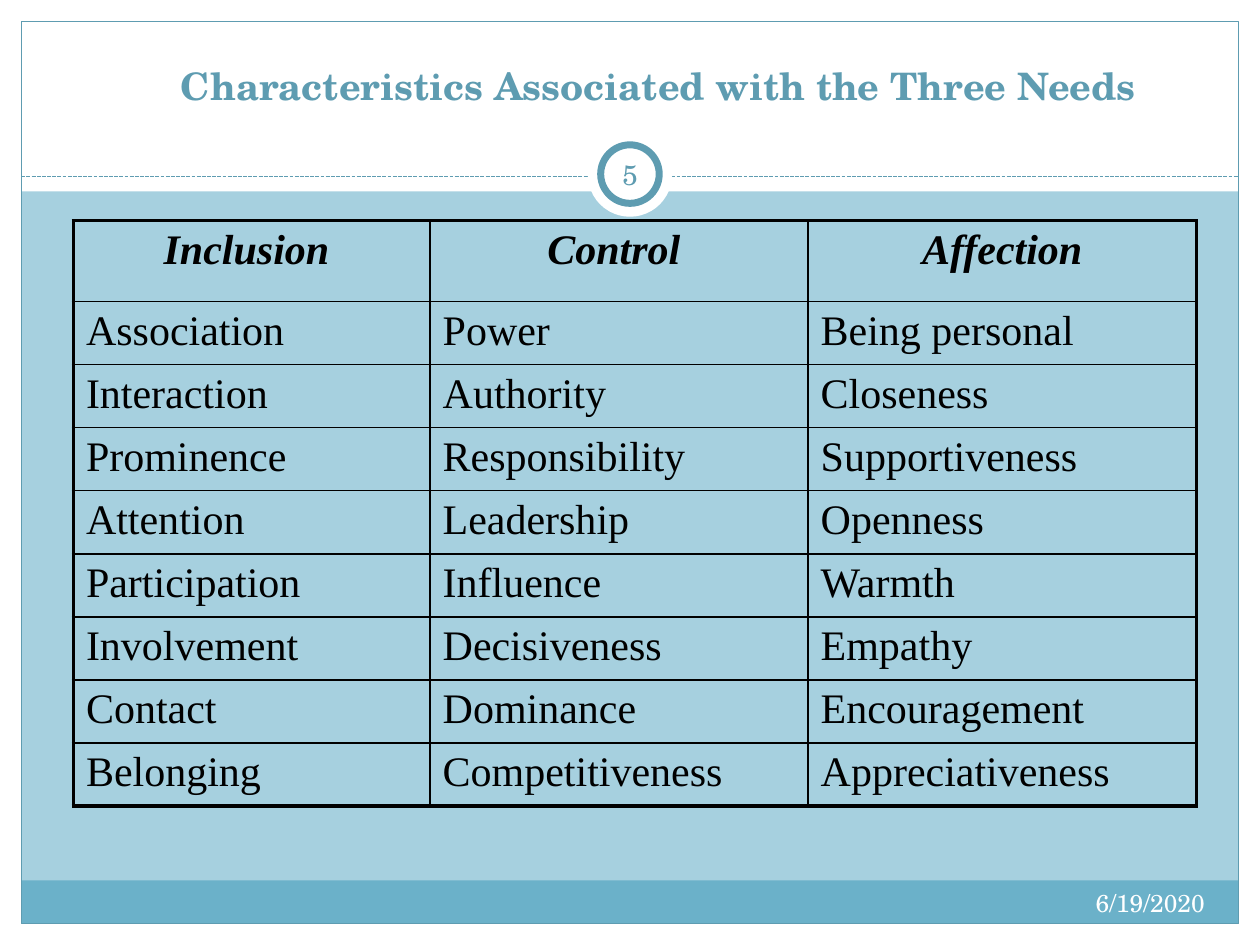
from lxml.etree import SubElement as sub, Element
from pptx import Presentation
from pptx.dml.color import RGBColor as RGB
from pptx.enum.dml import MSO_LINE as Dash
from pptx.enum.shapes import MSO_CONNECTOR as Conn, MSO_SHAPE as Kind
from pptx.enum.text import MSO_ANCHOR as Anchor, PP_ALIGN as Align
from pptx.oxml.ns import qn
from pptx.util import Cm, Pt

SKY = RGB(0xA6, 0xD0, 0xDF)
BLUE = RGB(0x6B, 0xB1, 0xC9)
TEAL = RGB(0x5E, 0x9C, 0xB1)
WHITE = RGB(0xFF, 0xFF, 0xFF)
BLACK = RGB(0, 0, 0)
SCHOOL = "TeX Gyre Schola"
TIMES = "Times New Roman"

WIDE, HIGH, EDGE = 25.4, 19.05, 0.43
THICK, THIN = Pt(2.25), Pt(1)
COLS = (7.19, 7.62, 7.83)
HEAD, ROW = 1.63, 1.19
NEEDS = [
    ("Inclusion ", "Control ", "Affection"),
    ("Association", "Power", "Being personal"),
    ("Interaction", "Authority", "Closeness"),
    ("Prominence", "Responsibility", "Supportiveness"),
    ("Attention", "Leadership", "Openness"),
    ("Participation", "Influence", "Warmth"),
    ("Involvement", "Decisiveness", "Empathy"),
    ("Contact", "Dominance", "Encouragement"),
    ("Belonging", "Competitiveness", "Appreciativeness"),
]


def add_box(slide, kind, box, fill=None, line=None, width=0.75):
    shape = slide.shapes.add_shape(kind, *map(Cm, box))
    shape.shadow.inherit = False
    if fill is None:
        shape.fill.background()
    else:
        shape.fill.solid()
        shape.fill.fore_color.rgb = fill
    if line is None:
        shape.line.fill.background()
    else:
        shape.line.color.rgb = line
        shape.line.width = Pt(width)


def add_rule(slide, left, right, top):
    rule = slide.shapes.add_connector(Conn.STRAIGHT, Cm(left), Cm(top), Cm(right), Cm(top))
    rule.line.color.rgb = TEAL
    rule.line.width = Pt(0.75)
    rule.line.dash_style = Dash.SQUARE_DOT
    sub(rule._element.spPr, qn("a:effectLst"))


def add_run(frame, text, align, size, font, color, bold=False, slant=False):
    para = frame.paragraphs[0]
    para.alignment = align
    run = para.add_run()
    run.text = text
    run.font.size = Pt(size)
    run.font.name = font
    run.font.color.rgb = color
    run.font.bold = bold
    run.font.italic = slant


def add_text(slide, box, text, align, size, color, anchor=Anchor.TOP, bold=False, side=0.25):
    frame = slide.shapes.add_textbox(*map(Cm, box)).text_frame
    frame.word_wrap = True
    frame.vertical_anchor = anchor
    frame.margin_left = frame.margin_right = Cm(side)
    add_run(frame, text, align, size, SCHOOL, color, bold)


def set_edges(cell, widths):
    """Border widths go left, right, top, bottom, ahead of the fill."""
    props = cell._tc.get_or_add_tcPr()
    for place, (side, width) in enumerate(zip("LRTB", widths)):
        edge = Element(qn("a:ln" + side), w=str(width))
        fill = sub(edge, qn("a:solidFill"))
        sub(fill, qn("a:srgbClr"), val=str(BLACK))
        props.insert(place, edge)


def add_needs(slide, left, top):
    rows, cols = len(NEEDS), len(COLS)
    tall = HEAD + ROW * (rows - 1)
    frame = slide.shapes.add_table(rows, cols, Cm(left), Cm(top), Cm(sum(COLS)), Cm(tall))
    table = frame.table
    table.first_row = table.horz_banding = False
    for col, width in zip(table.columns, COLS):
        col.width = Cm(width)
    for r, words in enumerate(NEEDS):
        head = r == 0
        table.rows[r].height = Cm(HEAD if head else ROW)
        for c, word in enumerate(words):
            cell = table.cell(r, c)
            cell.fill.background()
            outer = (c == 0, c == cols - 1, head, r == rows - 1)
            set_edges(cell, [THICK if out else THIN for out in outer])
            align = Align.CENTER if head else Align.LEFT
            add_run(cell.text_frame, word, align, 24, TIMES, BLACK, head, head)


def main():
    deck = Presentation()
    deck.slide_width, deck.slide_height = Cm(WIDE), Cm(HIGH)
    slide = deck.slides.add_slide(deck.slide_layouts[6])
    slide.background.fill.solid()
    slide.background.fill.fore_color.rgb = SKY

    # White margins, with a deep one behind the title
    for box in (
        (0, HIGH - EDGE, WIDE, EDGE),
        (0, 0, WIDE, 3.86),
        (0, 0, EDGE, HIGH),
        (WIDE - EDGE, 0, EDGE, HIGH),
    ):
        add_box(slide, Kind.RECTANGLE, box, WHITE)

    # Footer band, frame and dashed rule
    inner = WIDE - 2 * EDGE
    add_box(slide, Kind.RECTANGLE, (EDGE, 17.75, inner, 0.87), BLUE)
    add_box(slide, Kind.RECTANGLE, (EDGE, EDGE, inner, HIGH - 2 * EDGE), line=TEAL)
    add_rule(slide, EDGE, WIDE - EDGE, 3.56)

    # Badge for the slide number
    add_box(slide, Kind.OVAL, (11.85, 2.67, 1.7, 1.7), WHITE)
    add_box(slide, Kind.OVAL, (12.11, 2.92, 1.18, 1.18), WHITE, TEAL, 4)

    # Title and table
    add_text(slide, (3.38, 0.84, 19.79, 1.47), "Characteristics Associated with the Three Needs",
             Align.CENTER, 21.6, TEAL, Anchor.BOTTOM, bold=True)
    add_needs(slide, 1.48, 4.45)

    # Date and slide number
    add_text(slide, (16.08, 17.78, 8.46, 1.02), "6/19/2020", Align.RIGHT, 14, WHITE)
    add_text(slide, (12.07, 2.9, 1.27, 1.22), "5", Align.CENTER, 16, TEAL,
             Anchor.MIDDLE, side=0.13)

    deck.save("out.pptx")


if __name__ == "__main__":
    main()
